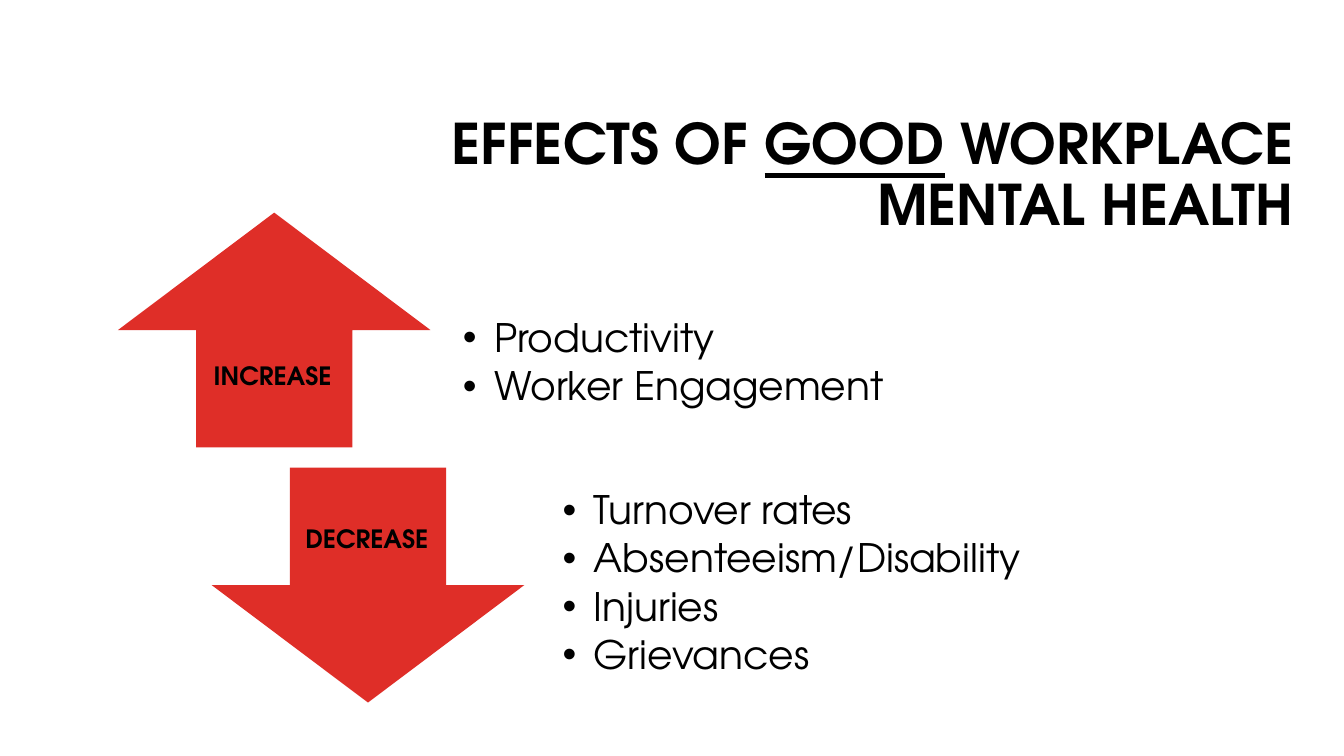
from dataclasses import dataclass

from lxml import etree
from pptx import Presentation
from pptx import util as u
from pptx.dml.color import RGBColor
from pptx.enum import shapes, text
from pptx.oxml.ns import qn


@dataclass(frozen=True)
class Theme:
    face: str = "TeX Gyre Adventor"
    ink: RGBColor = RGBColor(0, 0, 0)
    red: RGBColor = RGBColor(0xDF, 0x2E, 0x28)
    title: int = 40
    list: int = 28
    label: int = 18


THEME = Theme()
ARROW = (3.1, 2.33)
LIST = (5.26, 2.33)


def place(shape, left, top, width, height):
    shape.left, shape.top = u.Inches(left), u.Inches(top)
    shape.width, shape.height = u.Inches(width), u.Inches(height)


def style(run, size, bold=False):
    font = run.font
    font.name, font.size, font.bold = THEME.face, u.Pt(size), bold
    font.color.rgb = THEME.ink


def bullet(para):
    props = para._p.get_or_add_pPr()
    props.set("marL", str(u.Inches(0.31)))
    props.set("indent", str(-u.Inches(0.31)))
    etree.SubElement(props, qn("a:buFont"), typeface="Arial")
    etree.SubElement(props, qn("a:buChar"), char="•")


def add_title(slide, parts):
    title = slide.shapes.title
    place(title, 3.51, 1.05, 9.42, 1.41)
    frame = title.text_frame
    frame.word_wrap = True
    frame.auto_size = text.MSO_AUTO_SIZE.NONE
    frame.vertical_anchor = text.MSO_ANCHOR.MIDDLE
    para = frame.paragraphs[0]
    para.alignment = text.PP_ALIGN.RIGHT
    para.line_spacing = 0.9
    for words, under in parts:
        run = para.add_run()
        run.text = words
        style(run, THEME.title, bold=True)
        run.font.underline = under


def add_arrow(slide, kind, left, top):
    arrow = slide.shapes.add_shape(
        kind, u.Inches(left), u.Inches(top), *map(u.Inches, ARROW))
    arrow.shadow.inherit = False
    arrow.fill.solid()
    arrow.fill.fore_color.rgb = THEME.red
    arrow.line.fill.background()


def add_label(slide, words, left, top):
    box = slide.shapes.add_textbox(
        *map(u.Inches, (left, top, 1.71, 0.4)))
    box.text_frame.word_wrap = True
    box.text_frame.text = words
    style(box.text_frame.paragraphs[0].runs[0], THEME.label, bold=True)


def fill_list(body, items, left, top, side, drop):
    place(body, left, top, *LIST)
    frame = body.text_frame
    frame.word_wrap = True
    frame.auto_size = text.MSO_AUTO_SIZE.NONE
    frame.vertical_anchor = text.MSO_ANCHOR.TOP
    frame.margin_left = frame.margin_right = u.Inches(side)
    frame.margin_top, frame.margin_bottom = u.Inches(drop), 0
    frame.text = "\n".join(items)
    for para in frame.paragraphs:
        para.line_spacing = 0.9
        para.space_before, para.space_after = u.Pt(0), u.Pt(4.2)
        bullet(para)
        style(para.runs[0], THEME.list)


def main():
    deck = Presentation()
    deck.slide_width, deck.slide_height = u.Inches(13.33), u.Inches(7.5)
    slide = deck.slides.add_slide(deck.slide_layouts[3])
    upper, lower = slide.placeholders[1], slide.placeholders[2]

    # Heading
    add_title(slide, [("EFFECTS OF ", False), ("GOOD", True),
                      (" WORKPLACE MENTAL HEALTH", False)])

    # What goes up
    add_arrow(slide, shapes.MSO_SHAPE.UP_ARROW, 1.17, 2.11)
    add_label(slide, "INCREASE", 2.02, 3.53)
    fill_list(upper, ["Productivity", "Worker Engagement"],
              4.37, 2.11, side=0.22, drop=1.05)

    # What goes down
    add_arrow(slide, shapes.MSO_SHAPE.DOWN_ARROW, 2.1, 4.64)
    add_label(slide, "DECREASE", 2.93, 5.14)
    fill_list(lower, ["Turnover rates", "Absenteeism/Disability",
                      "Injuries", "Grievances"],
              5.3, 4.36, side=0.28, drop=0.51)

    deck.save("out.pptx")


if __name__ == "__main__":
    main()
